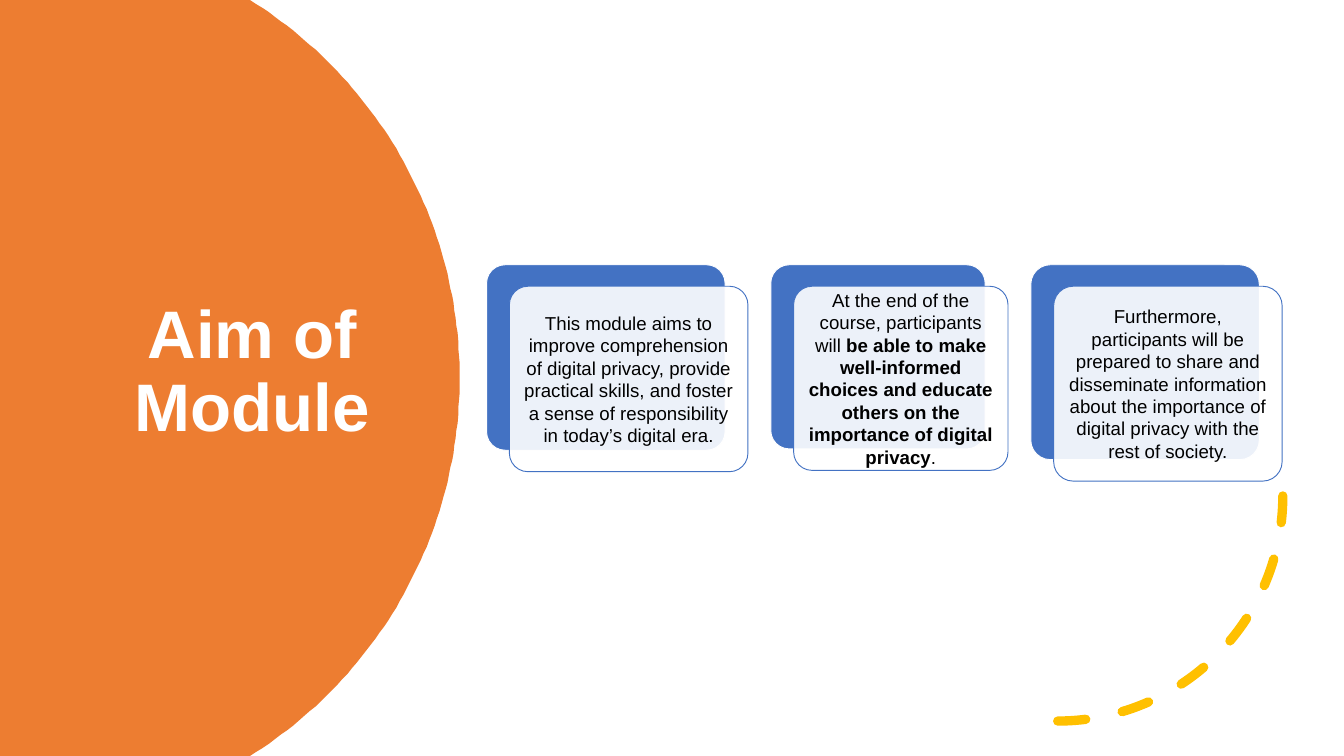
"""Build the "Aim of Module" slide with three overlapping text cards."""
import math
from dataclasses import dataclass

import lxml.etree
import pptx
import pptx.dml.color
import pptx.enum.dml
import pptx.enum.shapes
import pptx.enum.text
import pptx.oxml.ns
import pptx.presentation
import pptx.shapes.autoshape
import pptx.slide
import pptx.text.text
import pptx.util

RGBColor = pptx.dml.color.RGBColor
ORANGE = RGBColor(0xED, 0x7D, 0x31)
YELLOW = RGBColor(0xFF, 0xC0, 0x00)
BLUE = RGBColor(0x43, 0x72, 0xC3)
WHITE = RGBColor(0xFF, 0xFF, 0xFF)
BLACK = RGBColor(0x00, 0x00, 0x00)

EMU_PER_PX = 9144
SLIDE_WIDTH, SLIDE_HEIGHT = 2000, 1125
DISC_CENTER_X, DISC_RADIUS = 21, 663
DISC_STEPS = 120
CARD_TOP = 394
PANEL_SHIFT_X, PANEL_SHIFT_Y = 34, 32
FONT = "Arial"


@dataclass(frozen=True)
class Card:
    """A card's left edge, size and text runs as (text, bold) pairs."""

    left: int
    width: int
    height: int
    runs: tuple[tuple[str, bool], ...]


CARDS = (
    Card(724, 355, 276, ((
        "This module aims to improve comprehension of digital privacy, provide practical "
        "skills, and foster a sense of responsibility in today’s digital era.", False),)),
    Card(1147, 319, 274, (
        ("At the end of the course, participants will ", False),
        ("be able to make well-informed choices and educate others on the importance "
         "of digital privacy", True),
        (".", False))),
    Card(1534, 340, 290, ((
        "Furthermore, participants will be prepared to share and disseminate information "
        "about the importance of digital privacy with the rest of society.", False),)),
)


def px(length: int) -> pptx.util.Emu:
    """Turn a length in px into EMU."""
    return pptx.util.Emu(length * EMU_PER_PX)


def set_font(paragraph: pptx.text.text._Paragraph, size: int, color: RGBColor) -> None:
    """Centre a paragraph and set its font."""
    paragraph.alignment = pptx.enum.text.PP_ALIGN.CENTER
    paragraph.font.name = FONT
    paragraph.font.size = pptx.util.Pt(size)
    paragraph.font.color.rgb = color


def draw_disc(slide: pptx.slide.Slide) -> None:
    """Draw the part of the large disc that lies on the slide, behind the title."""
    middle = SLIDE_HEIGHT / 2
    half_angle = math.asin(middle / DISC_RADIUS)
    angles = [half_angle * (2 * step / DISC_STEPS - 1) for step in range(DISC_STEPS + 1)]
    points = [(DISC_CENTER_X + DISC_RADIUS * math.cos(angle),
               middle + DISC_RADIUS * math.sin(angle)) for angle in angles]
    builder = slide.shapes.build_freeform(0, 0, scale=EMU_PER_PX)
    builder.add_line_segments([*points, (0, SLIDE_HEIGHT)], close=True)
    disc = builder.convert_to_shape()
    disc.shadow.inherit = False
    disc.fill.solid()
    disc.fill.fore_color.rgb = ORANGE
    disc.line.fill.background()
    slide.shapes._spTree.insert(2, disc._element)


def draw_title(slide: pptx.slide.Slide) -> None:
    """Place and format the title placeholder."""
    title = slide.shapes.title
    title.left, title.top, title.width, title.height = px(113), px(189), px(525), px(732)
    frame = title.text_frame
    frame.text = "Aim of Module"
    frame.word_wrap = True
    frame.vertical_anchor = pptx.enum.text.MSO_ANCHOR.MIDDLE
    paragraph = frame.paragraphs[0]
    set_font(paragraph, 72, WHITE)
    paragraph.font.bold = True
    paragraph.line_spacing = 0.9


def draw_arc(slide: pptx.slide.Slide) -> None:
    """Draw the dashed quarter circle at the lower right."""
    arc = slide.shapes.add_shape(
        pptx.enum.shapes.MSO_SHAPE.ARC, px(1239), px(403), px(670), px(670))
    arc.shadow.inherit = False
    arc.rotation = 180
    arc._element.spPr.xfrm.set("flipH", "1")
    arc.fill.background()
    arc.line.color.rgb = YELLOW
    arc.line.width = pptx.util.Pt(10)
    arc.line.dash_style = pptx.enum.dml.MSO_LINE.DASH
    arc.line._get_or_add_ln().set("cap", "rnd")


def draw_rounded(slide: pptx.slide.Slide, left: int, top: int, card: Card,
                 fill: RGBColor, line: RGBColor) -> pptx.shapes.autoshape.Shape:
    """Draw a rounded rectangle of the card's size."""
    shape = slide.shapes.add_shape(
        pptx.enum.shapes.MSO_SHAPE.ROUNDED_RECTANGLE,
        px(left), px(top), px(card.width), px(card.height))
    shape.adjustments[0] = 0.1
    shape.shadow.inherit = False
    shape.fill.solid()
    shape.fill.fore_color.rgb = fill
    shape.line.color.rgb = line
    shape.line.width = pptx.util.Pt(1)
    return shape


def draw_card(slide: pptx.slide.Slide, card: Card) -> None:
    """Draw a blue back and the translucent panel that carries the text."""
    draw_rounded(slide, card.left, CARD_TOP, card, BLUE, WHITE)
    panel = draw_rounded(slide, card.left + PANEL_SHIFT_X, CARD_TOP + PANEL_SHIFT_Y,
                         card, WHITE, BLUE)
    color = panel._element.spPr.find(pptx.oxml.ns.qn("a:solidFill"))[0]
    lxml.etree.SubElement(color, pptx.oxml.ns.qn("a:alpha"), val="90000")
    frame = panel.text_frame
    frame.word_wrap = True
    frame.vertical_anchor = pptx.enum.text.MSO_ANCHOR.MIDDLE
    frame.margin_left = frame.margin_right = px(8)
    frame.margin_top = frame.margin_bottom = px(8)
    paragraph = frame.paragraphs[0]
    set_font(paragraph, 20, BLACK)
    for text, bold in card.runs:
        run = paragraph.add_run()
        run.text = text
        run.font.bold = bold


def main() -> None:
    """Build and save the presentation."""
    presentation = pptx.Presentation()
    presentation.slide_width = px(SLIDE_WIDTH)
    presentation.slide_height = px(SLIDE_HEIGHT)
    slide = presentation.slides.add_slide(presentation.slide_layouts[5])
    draw_disc(slide)
    draw_title(slide)
    draw_arc(slide)
    for card in CARDS:
        draw_card(slide, card)
    presentation.save("out.pptx")


if __name__ == "__main__":
    main()
